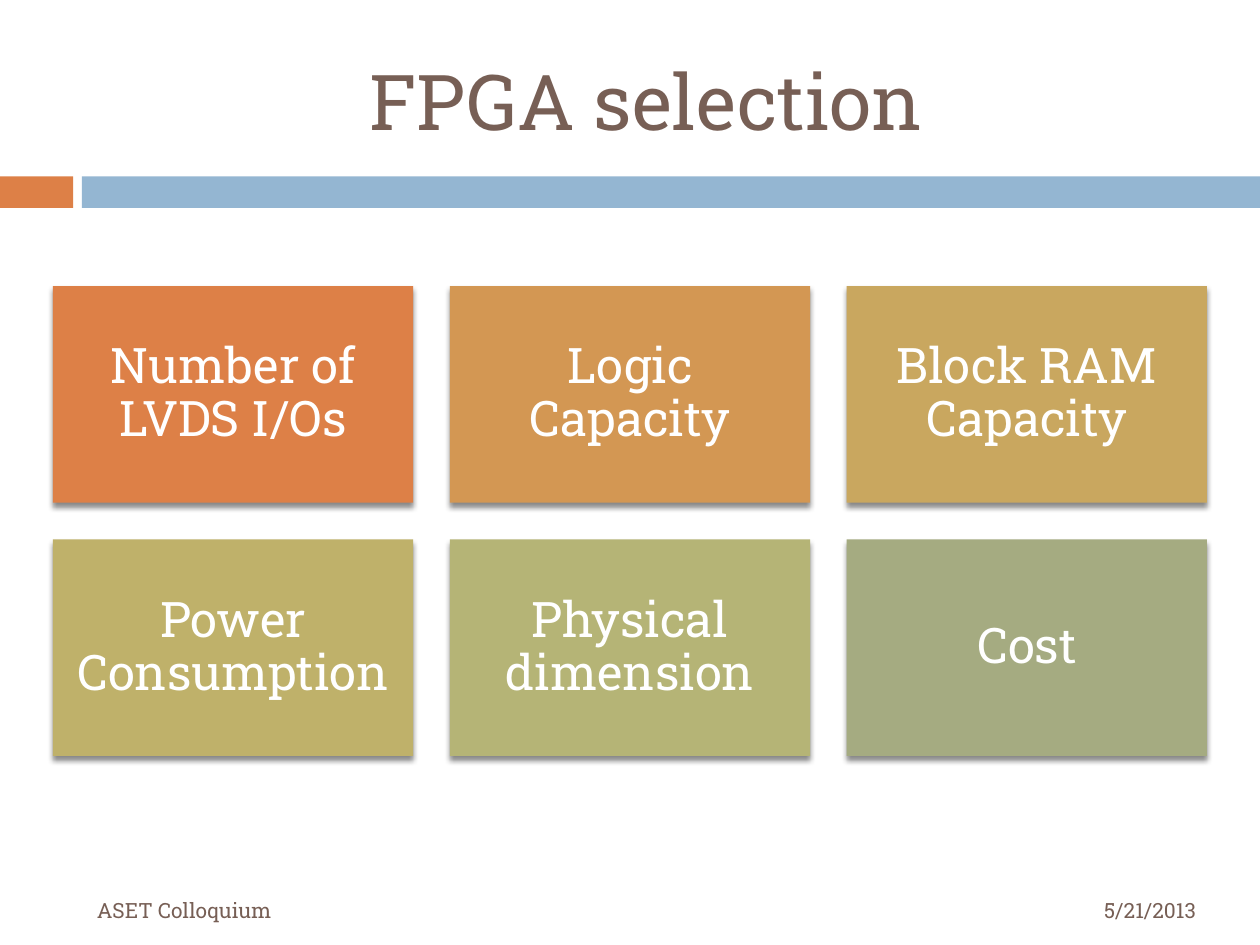
from lxml.etree import SubElement
from pptx import Presentation
from pptx.dml.color import RGBColor
from pptx.enum.shapes import MSO_SHAPE
from pptx.enum.text import MSO_ANCHOR, PP_ALIGN
from pptx.oxml.ns import qn
from pptx.util import Inches, Pt

FONT = "Roboto Slab"
BROWN, WHITE, ORANGE, BLUE = "775F55", "FFFFFF", "DD8047", "94B6D2"

CRITERIA = [
    ("Number of LVDS I/Os", ORANGE),
    ("Logic Capacity", "D39753"),
    ("Block RAM Capacity", "C9A75F"),
    ("Power Consumption", "BFB16A"),
    ("Physical dimension", "B5B476"),
    ("Cost", "A5AB81"),
]
COLUMNS = 3
LEFT, TOP = 0.42, 2.27
TILE_W, TILE_H = 2.86, 1.72
GAP = 0.29


def rgb(value):
    return RGBColor.from_string(value)


def set_text(shape, text, size, color, align, **frame):
    tf = shape.text_frame
    settings = {"word_wrap": True, "vertical_anchor": MSO_ANCHOR.MIDDLE, **frame}
    for name, value in settings.items():
        setattr(tf, name, value)
    p = tf.paragraphs[0]
    p.alignment = align
    r = p.add_run()
    r.text = text
    for name, value in {"name": FONT, "size": Pt(size)}.items():
        setattr(r.font, name, value)
    r.font.color.rgb = rgb(color)
    return p


def add_label(s, box, text, size, align):
    tb = s.shapes.add_textbox(*map(Inches, box))
    set_text(tb, text, size, BROWN, align)


def add_rect(s, box, color):
    sp = s.shapes.add_shape(MSO_SHAPE.RECTANGLE, *map(Inches, box))
    sp.shadow.inherit = False
    sp.fill.solid()
    sp.fill.fore_color.rgb = rgb(color)
    sp.line.fill.background()
    return sp


def add_shadow(sp):
    effects = sp._element.spPr.find(qn("a:effectLst"))
    shadow = SubElement(effects, qn("a:outerShdw"), blurRad=str(Pt(3)),
                        dist=str(Pt(2.4)), dir="5400000", rotWithShape="0")
    color = SubElement(shadow, qn("a:srgbClr"), val="000000")
    SubElement(color, qn("a:alpha"), val="45000")


def add_tile(s, box, text, color):
    sp = add_rect(s, box, color)
    add_shadow(sp)
    inset = Inches(0.12)
    p = set_text(sp, text, 28, WHITE, PP_ALIGN.CENTER,
                 margin_left=inset, margin_right=inset,
                 margin_top=inset, margin_bottom=inset)
    p.line_spacing = 0.9


def main():
    prs = Presentation()
    prs.slide_width, prs.slide_height = Inches(10), Inches(7.5)
    s = prs.slides.add_slide(prs.slide_layouts[6])

    # Header bars and title
    add_rect(s, (0, 1.4, 0.58, 0.25), ORANGE)
    add_rect(s, (0.65, 1.4, 9.35, 0.25), BLUE)
    add_label(s, (0.67, 0.25, 8.92, 1.08), "FPGA selection", 44, PP_ALIGN.CENTER)

    # Grid of selection criteria
    for i, (text, color) in enumerate(CRITERIA):
        row, col = divmod(i, COLUMNS)
        box = (LEFT + col * (TILE_W + GAP), TOP + row * (TILE_H + GAP), TILE_W, TILE_H)
        add_tile(s, box, text, color)

    # Footer
    add_label(s, (0.67, 7.02, 5.93, 0.4), "ASET Colloquium", 12, PP_ALIGN.LEFT)
    add_label(s, (6.67, 7.02, 2.92, 0.4), "5/21/2013", 12, PP_ALIGN.RIGHT)

    prs.save("out.pptx")


if __name__ == "__main__":
    main()
